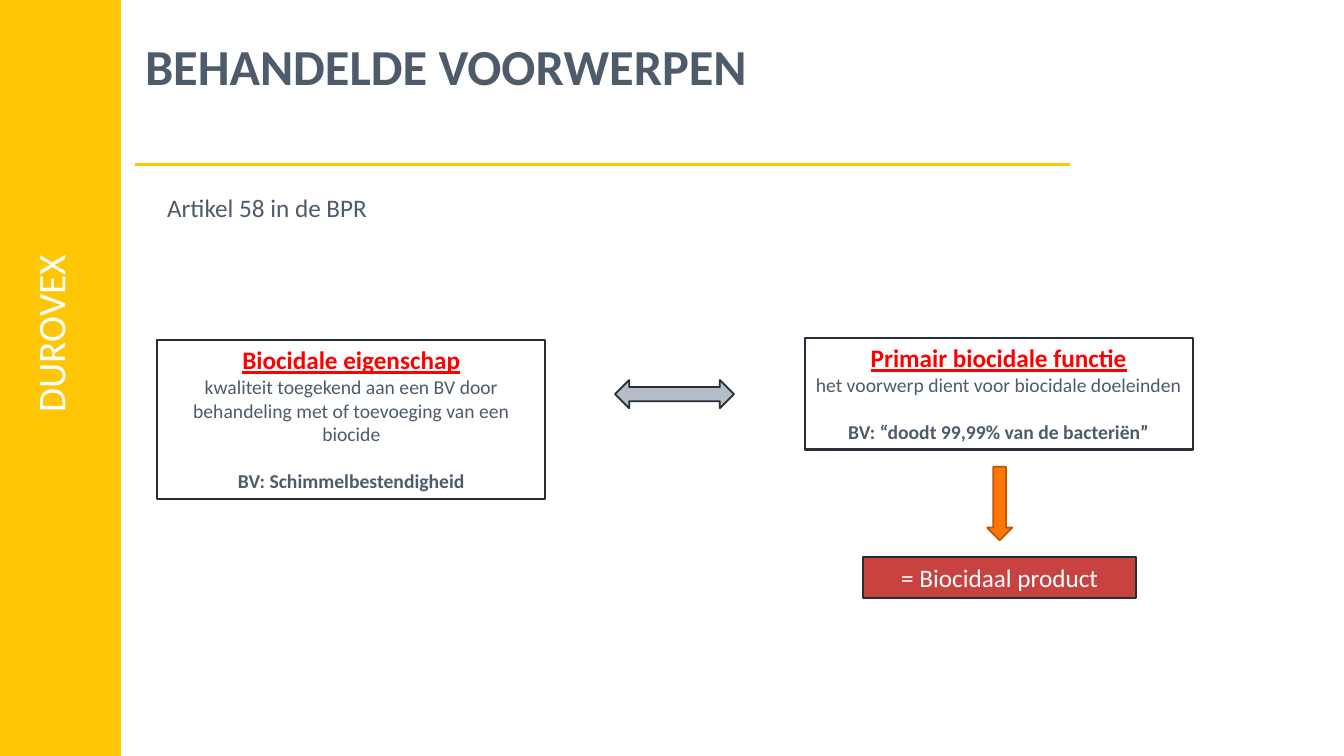
from dataclasses import dataclass
from typing import Any

import pptx
import pptx.dml.color
import pptx.enum.shapes
import pptx.enum.text
import pptx.util
from lxml import etree
from pptx.oxml.ns import qn

Inches = pptx.util.Inches
Pt = pptx.util.Pt
PRESET = pptx.enum.shapes.MSO_SHAPE
ALIGN = pptx.enum.text.PP_ALIGN

YELLOW = "FFC608"
SLATE = "4D5B6B"
DARK = "262D36"
RED = "FF0000"
WHITE = "FFFFFF"


@dataclass(frozen=True)
class Box:
    left: float
    top: float
    width: float
    height: float


@dataclass(frozen=True)
class Block:
    box: Box
    preset: Any
    fill: str | None
    line: str | None
    weight: float = 1.5


@dataclass(frozen=True)
class Label:
    box: Box
    text: str
    size: float
    color: str
    bold: bool = False
    centred: bool = False
    vertical: bool = False


@dataclass(frozen=True)
class Concept:
    box: Box
    heading: str
    meaning: str
    example: str


def rgb(value: str) -> Any:
    return pptx.dml.color.RGBColor.from_string(value)


def add_run(paragraph: Any, text: str, size: float, color: str, **extra: bool) -> None:
    run = paragraph.add_run()
    run.text = text
    formats = {"name": "Calibri", "size": Pt(size), **extra}
    for attribute, value in formats.items():
        setattr(run.font, attribute, value)
    run.font.color.rgb = rgb(color)


def bounds(box: Box) -> list[Any]:
    return [Inches(n) for n in (box.left, box.top, box.width, box.height)]


def draw_block(slide: Any, block: Block) -> Any:
    shape = slide.shapes.add_shape(block.preset, *bounds(block.box))
    shape.shadow.inherit = False
    if block.fill:
        shape.fill.solid()
        shape.fill.fore_color.rgb = rgb(block.fill)
    else:
        shape.fill.background()
    if block.line:
        shape.line.color.rgb = rgb(block.line)
        shape.line.width = Pt(block.weight)
    else:
        shape.line.fill.background()
    frame = shape.text_frame
    frame.word_wrap = True
    frame.vertical_anchor = pptx.enum.text.MSO_ANCHOR.TOP
    return shape


def draw_label(slide: Any, label: Label) -> None:
    frame = slide.shapes.add_textbox(*bounds(label.box)).text_frame
    frame.word_wrap = True
    if label.vertical:
        frame._txBody.bodyPr.set("vert", "vert270")
    paragraph = frame.paragraphs[0]
    paragraph.alignment = ALIGN.CENTER if label.centred else ALIGN.LEFT
    add_run(paragraph, label.text, label.size, label.color, bold=label.bold)


def draw_concept(slide: Any, concept: Concept) -> None:
    frame = draw_block(slide, Block(concept.box, PRESET.RECTANGLE, None, DARK)).text_frame
    definition = frame.paragraphs[0]
    definition.alignment = ALIGN.CENTER
    add_run(definition, concept.heading, 18, RED, bold=True, underline=True)
    definition.add_line_break()
    add_run(definition, concept.meaning, 14, SLATE)
    example = frame.add_paragraph()
    example.alignment = ALIGN.CENTER
    example.space_before = Pt(17)
    add_run(example, concept.example, 14, SLATE, bold=True)


def draw_rule(slide: Any, left: float, right: float, y: float) -> None:
    rule = slide.shapes.add_connector(
        pptx.enum.shapes.MSO_CONNECTOR.STRAIGHT,
        Inches(left), Inches(y), Inches(right), Inches(y),
    )
    rule.line.color.rgb = rgb(YELLOW)
    rule.line.width = Pt(2.25)
    etree.SubElement(rule._element.spPr, qn("a:effectLst"))


PRODUCT = Box(8.56, 5.53, 2.71, 0.4)

BLOCKS = [
    Block(Box(-0.01, 0, 1.21, 7.5), PRESET.RECTANGLE, YELLOW, None),
    Block(Box(6.1, 3.77, 1.18, 0.28), PRESET.LEFT_RIGHT_ARROW, "B3BDC8", DARK, 1.25),
    Block(Box(9.79, 4.63, 0.25, 0.73), PRESET.DOWN_ARROW, "FF7605", "BD5704", 1.25),
    Block(PRODUCT, PRESET.RECTANGLE, "C84340", DARK),
]

LABELS = [
    Label(Box(0.21, 2.2, 0.67, 2.22), "DUROVEX", 28, WHITE, centred=True, vertical=True),
    Label(Box(1.34, 0.3, 9.27, 1.25), "BEHANDELDE VOORWERPEN", 36, SLATE, bold=True),
    Label(Box(1.56, 1.86, 2.56, 0.4), "Artikel 58 in de BPR", 18, SLATE),
    Label(PRODUCT, "= Biocidaal product", 18, WHITE, centred=True),
]

CONCEPTS = [
    Concept(
        Box(1.56, 3.37, 3.85, 1.58),
        "Biocidale eigenschap",
        "kwaliteit toegekend aan een BV door behandeling met of toevoeging van een biocide",
        "BV: Schimmelbestendigheid",
    ),
    Concept(
        Box(7.98, 3.35, 3.85, 1.11),
        "Primair biocidale functie",
        "het voorwerp dient voor biocidale doeleinden",
        "BV: “doodt 99,99% van de bacteriën”",
    ),
]


def main() -> None:
    deck = pptx.Presentation()
    deck.slide_width = Inches(13.33)
    deck.slide_height = Inches(7.5)
    slide = deck.slides.add_slide(deck.slide_layouts[6])
    for block in BLOCKS:
        draw_block(slide, block)
    draw_rule(slide, 1.34, 10.61, 1.63)
    for concept in CONCEPTS:
        draw_concept(slide, concept)
    for label in LABELS:
        draw_label(slide, label)
    deck.save("out.pptx")


if __name__ == "__main__":
    main()
